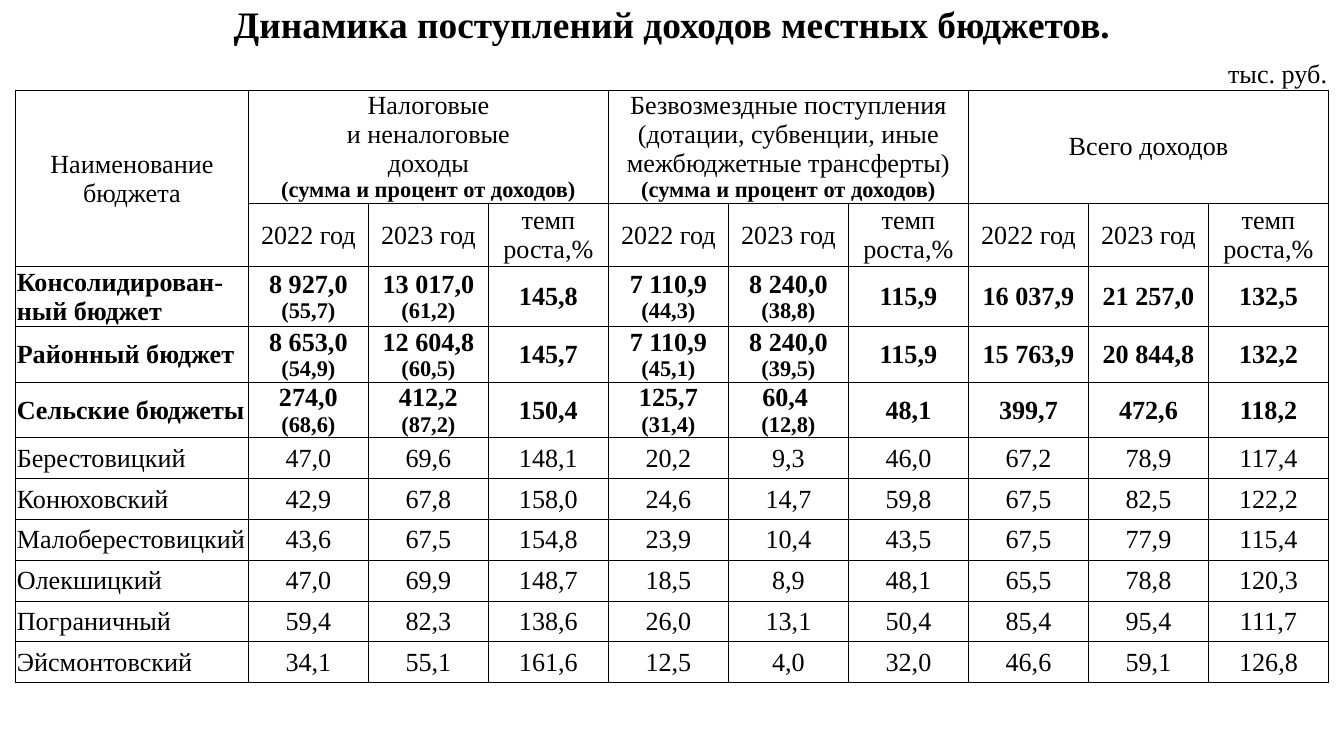
from lxml.etree import SubElement
from pptx import Presentation
from pptx.dml.color import RGBColor
from pptx.enum.text import MSO_ANCHOR as Anchor, PP_ALIGN as Align
from pptx.oxml.ns import qn
from pptx.util import Pt

BLACK = RGBColor(0, 0, 0)
FONT = "Times New Roman"
TITLE_SIZE, BODY_SIZE, NOTE_SIZE = 20, 14, 12
SIDES = ("lnL", "lnR", "lnT", "lnB")
COLUMN_WIDTHS = [124.8] + [64.3] * 9
ROW_HEIGHTS = [23, 23, 34, 34] + [21.9] * 9
TITLE_ROW, UNIT_ROW, GROUP_ROW, YEAR_ROW, FIRST_DATA_ROW = range(5)
TOTAL_ROWS = range(4, 7)
MERGES = [
    ((TITLE_ROW, 0), (TITLE_ROW, 9)),
    *[((UNIT_ROW, col), (UNIT_ROW, col + 1)) for col in (1, 3, 5)],
    ((GROUP_ROW, 0), (YEAR_ROW, 0)),
    *[((GROUP_ROW, col), (GROUP_ROW, col + 2)) for col in (1, 4, 7)],
]
SHARE_NOTE = "*(сумма и процент от доходов)"
HEADINGS = {
    (TITLE_ROW, 0): "Динамика поступлений доходов местных бюджетов.",
    (UNIT_ROW, 9): "тыс. руб.",
    (GROUP_ROW, 0): "Наименование бюджета",
    (GROUP_ROW, 1): "Налоговые\nи неналоговые\nдоходы\n" + SHARE_NOTE,
    (GROUP_ROW, 4): "Безвозмездные поступления (дотации, субвенции, иные "
                    "межбюджетные трансферты)\n" + SHARE_NOTE,
    (GROUP_ROW, 7): "Всего доходов",
}
YEAR_HEADINGS = ["2022 год", "2023 год", "темп\nроста,%"] * 3
BUDGETS = [
    ["Консолидирован-ный бюджет", "8 927,0\n*(55,7)", "13 017,0 *(61,2)", "145,8",
     "7 110,9\n*(44,3)", "8 240,0 *(38,8)", "115,9", "16 037,9", "21 257,0", "132,5"],
    ["Районный бюджет", "8 653,0\n*(54,9)", "12 604,8 *(60,5)", "145,7",
     "7 110,9\n*(45,1)", "8 240,0 *(39,5)", "115,9", "15 763,9", "20 844,8", "132,2"],
    ["Сельские бюджеты", "274,0\n*(68,6)", "412,2\n*(87,2)", "150,4",
     "125,7\n*(31,4)", "60,4 \n*(12,8)", "48,1", "399,7", "472,6", "118,2"],
    ["Берестовицкий", "47,0", "69,6", "148,1", "20,2", "9,3", "46,0", "67,2", "78,9", "117,4"],
    ["Конюховский", "42,9", "67,8", "158,0", "24,6", "14,7", "59,8", "67,5", "82,5", "122,2"],
    ["Малоберестовицкий", "43,6", "67,5", "154,8", "23,9", "10,4", "43,5", "67,5", "77,9", "115,4"],
    ["Олекшицкий", "47,0", "69,9", "148,7", "18,5", "8,9", "48,1", "65,5", "78,8", "120,3"],
    ["Пограничный", "59,4", "82,3", "138,6", "26,0", "13,1", "50,4", "85,4", "95,4", "111,7"],
    ["Эйсмонтовский", "34,1", "55,1", "161,6", "12,5", "4,0", "32,0", "46,6", "59,1", "126,8"],
]


def apply_format(target, values):
    """Set each attribute named in values on the target."""
    for name, value in values.items():
        setattr(target, name, value)


def add_span(para, text, size, bold):
    """Append a formatted span to a paragraph."""
    span = para.add_run()
    span.text = text
    apply_format(span.font, {"name": FONT, "size": Pt(size), "bold": bold})
    span.font.color.rgb = BLACK


def write_cell(cell, text, align, size=BODY_SIZE, bold=False):
    """Write paragraphs split by line breaks; an asterisk starts a small bold note."""
    for index, line in enumerate(text.split("\n")):
        frame = cell.text_frame
        para = frame.add_paragraph() if index else frame.paragraphs[0]
        para.alignment = align
        body, _, note = line.partition("*")
        if body:
            add_span(para, body, size, bold)
        if note:
            add_span(para, note, NOTE_SIZE, True)


def draw_borders(cell, black_sides):
    """Draw thin black lines on the given sides and hide the others."""
    properties = cell._tc.get_or_add_tcPr()
    for position, side in enumerate(SIDES):
        line = SubElement(properties, qn(f"a:{side}"), w=str(Pt(0.5)))
        if side in black_sides:
            fill = SubElement(line, qn("a:solidFill"))
            SubElement(fill, qn("a:srgbClr"), val=str(BLACK))
        else:
            SubElement(line, qn("a:noFill"))
        properties.insert(position, line)


def format_cell(cell, row):
    """Set the margins, anchor, borders and fill of a cell by its row."""
    apply_format(cell, {
        "margin_left": Pt(0.7), "margin_right": Pt(0.7),
        "margin_top": Pt(0.7), "margin_bottom": Pt(0.3),
        "vertical_anchor": Anchor.BOTTOM if row <= UNIT_ROW else Anchor.MIDDLE,
    })
    draw_borders(cell, {TITLE_ROW: (), UNIT_ROW: ("lnB",)}.get(row, SIDES))
    cell.fill.background()


def add_budget_table(page):
    """Add the empty formatted grid and return its table."""
    frame = page.shapes.add_table(
        len(ROW_HEIGHTS), len(COLUMN_WIDTHS),
        Pt(8.3), Pt(2), Pt(sum(COLUMN_WIDTHS)), Pt(378))
    table = frame.table
    apply_format(table, {"first_row": False, "horz_banding": False})
    for column, width in zip(table.columns, COLUMN_WIDTHS):
        column.width = Pt(width)
    for index, height in enumerate(ROW_HEIGHTS):
        table.rows[index].height = Pt(height)
        for cell in table.rows[index].cells:
            format_cell(cell, index)
    frame.height = Pt(378)
    for start, end in MERGES:
        table.cell(*start).merge(table.cell(*end))
    return table


def fill_headings(table):
    """Write the title, the unit and the column headings."""
    for (row, col), text in HEADINGS.items():
        is_title = row == TITLE_ROW
        align = Align.RIGHT if row == UNIT_ROW else Align.CENTER
        size = TITLE_SIZE if is_title else BODY_SIZE
        write_cell(table.cell(row, col), text, align, size, is_title)
    for col, text in enumerate(YEAR_HEADINGS, 1):
        write_cell(table.cell(YEAR_ROW, col), text, Align.CENTER)


def fill_budgets(table):
    """Write one row of figures for each budget."""
    for row, budget in enumerate(BUDGETS, FIRST_DATA_ROW):
        for col, text in enumerate(budget):
            align = Align.CENTER if col else Align.LEFT
            write_cell(table.cell(row, col), text, align, bold=row in TOTAL_ROWS)


def main():
    """Build the budget revenue slide."""
    deck = Presentation()
    apply_format(deck, {"slide_width": Pt(720), "slide_height": Pt(405)})
    page = deck.slides.add_slide(deck.slide_layouts[6])
    table = add_budget_table(page)
    fill_headings(table)
    fill_budgets(table)
    deck.save("out.pptx")


if __name__ == "__main__":
    main()
